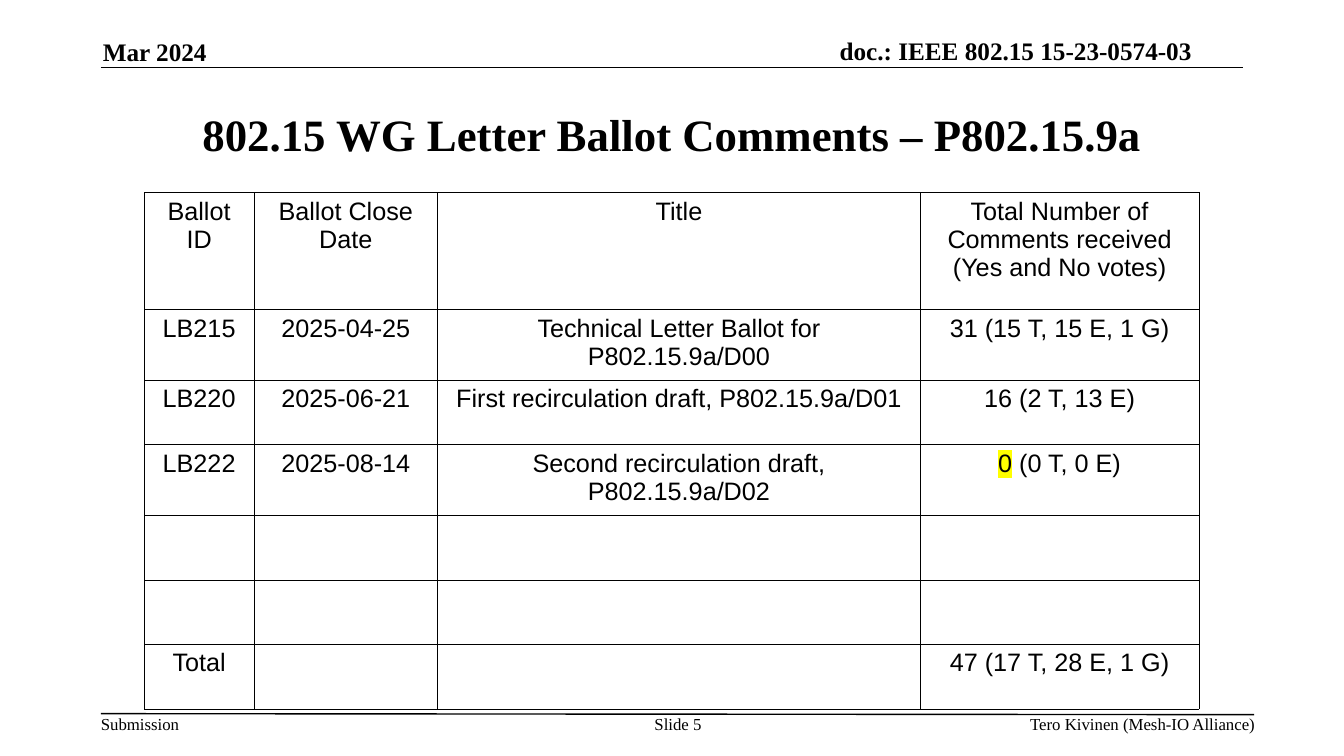
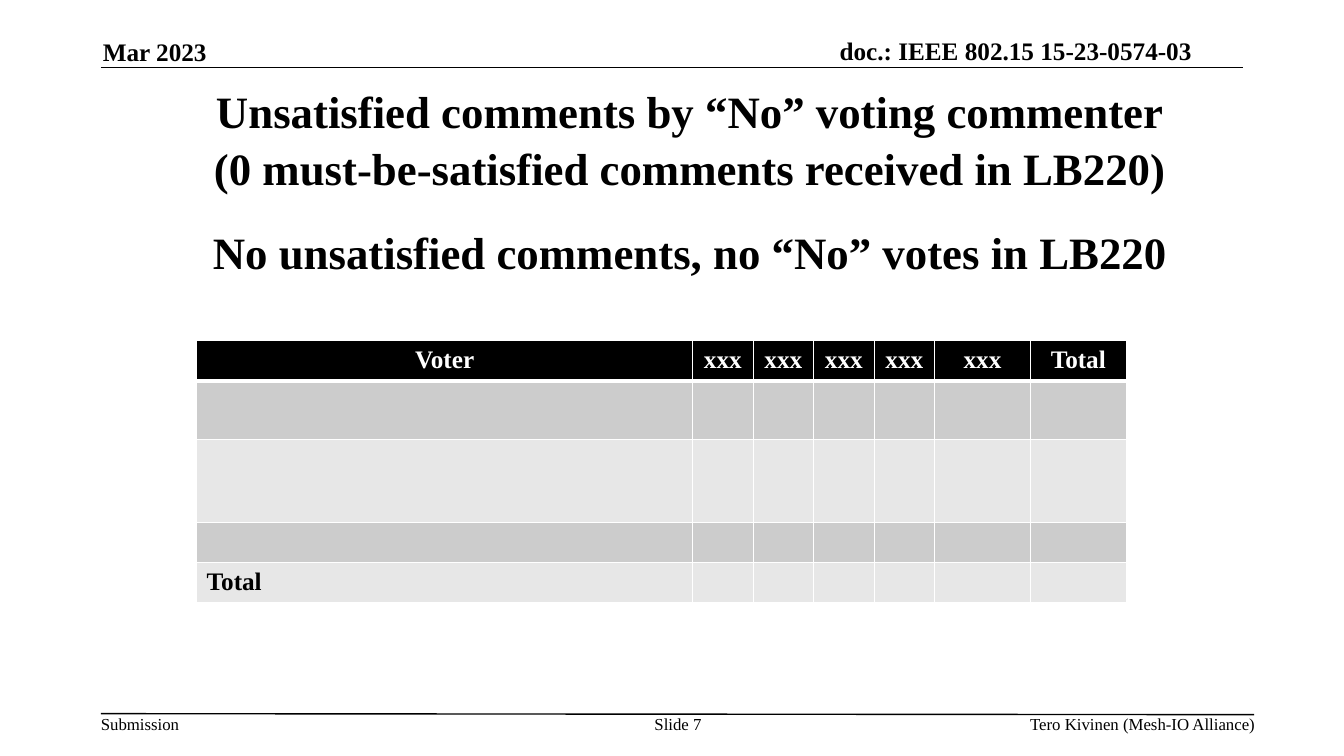
from dataclasses import dataclass
from typing import Optional

from lxml import etree
from pptx import Presentation
from pptx.dml.color import RGBColor
from pptx.enum.text import MSO_ANCHOR, MSO_AUTO_SIZE, PP_ALIGN
from pptx.enum.shapes import MSO_CONNECTOR
from pptx.oxml.ns import qn
from pptx.util import Inches, Pt

LEFT, CENTER, RIGHT = PP_ALIGN.LEFT, PP_ALIGN.CENTER, PP_ALIGN.RIGHT
TOP, MIDDLE, BOTTOM = MSO_ANCHOR.TOP, MSO_ANCHOR.MIDDLE, MSO_ANCHOR.BOTTOM
STRAIGHT = MSO_CONNECTOR.STRAIGHT
NO_FIT = MSO_AUTO_SIZE.NONE


@dataclass(frozen=True)
class Theme:
    """Colours, fonts and type sizes."""
    black: str = "000000"
    white: str = "FFFFFF"
    dark_band: str = "CCCCCC"
    light_band: str = "E7E7E7"
    mark: str = "FFFF00"
    serif: str = "Times New Roman"
    sans: str = "Arial"
    title: int = 32
    body: int = 18
    footer: int = 12


T = Theme()


@dataclass(frozen=True)
class TitleLine:
    """A line of the title and the points of space above it."""
    text: str
    before: int = 0


@dataclass(frozen=True)
class Box:
    """Place and size in inches."""
    x: float
    y: float
    w: float
    h: float


@dataclass(frozen=True)
class Label:
    """A running header or footer text."""
    text: str
    box: Box
    size: int = T.footer
    bold: bool = False
    align: PP_ALIGN = LEFT
    anchor: MSO_ANCHOR = TOP


@dataclass(frozen=True)
class Rule:
    """A horizontal line, from and to."""
    x1: float
    y1: float
    x2: float
    y2: float


RULES = (Rule(1, 0.67, 12.33, 0.67), Rule(1, 7.08, 12.44, 7.09))
LABELS = (
    Label("doc.: IEEE 802.15 15-23-0574-03", Box(6.72, 0.35, 5.1, 0.3),
          T.body, True, RIGHT, BOTTOM),
    Label("Submission", Box(1, 7.08, 0.78, 0.2)),
    Label("Tero Kivinen (Mesh-IO Alliance)", Box(7.81, 7.08, 4.64, 0.2), align=RIGHT),
)

BALLOT_COLS = (1.09, 1.82, 4.79, 2.76)
BALLOT_HEIGHTS = (1.16, 0.7, 0.64, 0.7, 0.64, 0.64, 0.64)
BALLOTS = (
    ("Ballot ID", "Ballot Close Date", "Title",
     "Total Number of Comments received (Yes and No votes)"),
    ("LB215", "2025-04-25", "Technical Letter Ballot for P802.15.9a/D00",
     "31 (15 T, 15 E, 1 G)"),
    ("LB220", "2025-06-21", "First recirculation draft, P802.15.9a/D01",
     "16 (2 T, 13 E)"),
    ("LB222", "2025-08-14", "Second recirculation draft, P802.15.9a/D02", ""),
    ("",) * 4,
    ("",) * 4,
    ("Total", "", "", "47 (17 T, 28 E, 1 G)"),
)
VOTER_COLS = (4.92,) + (0.6,) * 4 + (0.95,) * 2
VOTER_HEIGHTS = (0.38, 0.58, 0.82, 0.4, 0.4)
VOTER_HEADS = ("Voter",) + ("xxx",) * 5 + ("Total",)


def add_run(p, text: str, *, size: int = T.body, font: str = T.serif,
            color: str = T.black, bold: bool = False,
            highlight: Optional[str] = None) -> None:
    """Append a formatted run to a paragraph."""
    r = p.add_run()
    r.text = text
    r.font.size, r.font.name, r.font.bold = Pt(size), font, bold
    r.font.color.rgb = RGBColor.from_string(color)
    if highlight:
        mark = etree.Element(qn("a:highlight"))
        etree.SubElement(mark, qn("a:srgbClr"), val=highlight)
        r.font._element.find(qn("a:latin")).addprevious(mark)


def add_label(s, label: Label) -> None:
    """Draw a text box without margins."""
    b = label.box
    tf = s.shapes.add_textbox(Inches(b.x), Inches(b.y), Inches(b.w), Inches(b.h)).text_frame
    tf.word_wrap = True
    tf.vertical_anchor = label.anchor
    tf.margin_left = tf.margin_right = tf.margin_top = tf.margin_bottom = 0
    p = tf.paragraphs[0]
    p.alignment = label.align
    add_run(p, label.text, size=label.size, bold=label.bold)


def add_rule(s, rule: Rule) -> None:
    """Draw a thin line without a shadow."""
    ln = s.shapes.add_connector(STRAIGHT, Inches(rule.x1), Inches(rule.y1),
                                Inches(rule.x2), Inches(rule.y2))
    ln.line.color.rgb = RGBColor.from_string(T.black)
    ln.line.width = Pt(1)
    etree.SubElement(ln._element.spPr, qn("a:effectLst"))


def set_title(s, lines: tuple[TitleLine, ...], box: Box) -> None:
    """Place and fill the title placeholder."""
    sp = s.shapes.title
    sp.left, sp.top, sp.width, sp.height = map(Inches, (box.x, box.y, box.w, box.h))
    tf = sp.text_frame
    tf.auto_size, tf.word_wrap, tf.vertical_anchor = NO_FIT, True, MIDDLE
    for i, line in enumerate(lines):
        p = tf.add_paragraph() if i else tf.paragraphs[0]
        p.alignment = CENTER
        p.space_before = Pt(line.before)
        add_run(p, line.text, size=T.title, bold=True)


def add_slide(prs, date: str, number: int, lines: tuple[TitleLine, ...], title_box: Box):
    """Start a slide with its title, header and footer."""
    s = prs.slides.add_slide(prs.slide_layouts[5])
    set_title(s, lines, title_box)
    for rule in RULES:
        add_rule(s, rule)
    own = (
        Label(date, Box(1.02, 0.36, 2.73, 0.3), T.body, True, anchor=BOTTOM),
        Label(f"Slide {number}", Box(6.34, 7.08, 0.77, 0.39), align=CENTER),
    )
    for label in LABELS + own:
        add_label(s, label)
    return s


def add_grid(s, x: float, y: float, cols: tuple[float, ...], heights: tuple[float, ...]):
    """Add a plain table with the given column widths and row heights."""
    table = s.shapes.add_table(len(heights), len(cols), Inches(x), Inches(y),
                               Inches(sum(cols)), Inches(sum(heights))).table
    table.first_row = table.horz_banding = False
    for col, width in zip(table.columns, cols):
        col.width = Inches(width)
    for row, height in zip(table.rows, heights):
        row.height = Inches(height)
    return table


def style_cell(cell, *, border: str, width: float, fill: Optional[str] = None,
               top: Optional[float] = None, bottom: Optional[float] = None) -> None:
    """Set the fill and the four borders of a cell."""
    if fill:
        cell.fill.solid()
        cell.fill.fore_color.rgb = RGBColor.from_string(fill)
    else:
        cell.fill.background()
    widths = {"a:lnL": width, "a:lnR": width, "a:lnT": top or width, "a:lnB": bottom or width}
    tcPr = cell._tc.get_or_add_tcPr()
    for i, (tag, points) in enumerate(widths.items()):
        ln = etree.Element(qn(tag), w=str(int(Pt(points))))
        solid = etree.SubElement(ln, qn("a:solidFill"))
        etree.SubElement(solid, qn("a:srgbClr"), val=border)
        tcPr.insert(i, ln)


def ballot_slide(prs) -> None:
    """Build the slide of ballot comments."""
    s = add_slide(prs, "Mar 2024", 5,
                  (TitleLine("802.15 WG Letter Ballot Comments – P802.15.9a"),),
                  Box(1, 0.75, 11.33, 1.16))
    table = add_grid(s, 1.43, 1.91, BALLOT_COLS, BALLOT_HEIGHTS)
    for row, texts in zip(table.rows, BALLOTS):
        for cell, text in zip(row.cells, texts):
            style_cell(cell, border=T.black, width=0.06)
            p = cell.text_frame.paragraphs[0]
            p.alignment = CENTER
            if text:
                add_run(p, text, font=T.sans)
    p = table.cell(3, 3).text_frame.paragraphs[0]
    add_run(p, "0", font=T.sans, highlight=T.mark)
    add_run(p, " (0 T, 0 E)", font=T.sans)


def voter_slide(prs) -> None:
    """Build the slide of unsatisfied comments."""
    lines = (
        TitleLine("Unsatisfied comments by “No” voting commenter"),
        TitleLine("(0 must-be-satisfied comments received in LB220)", 2),
        TitleLine("No unsatisfied comments, no “No” votes in LB220", 22),
    )
    s = add_slide(prs, "Mar 2023", 7, lines, Box(1.02, 0.7, 11.65, 2.2))
    table = add_grid(s, 1.95, 3.38, VOTER_COLS, VOTER_HEIGHTS)
    for i, row in enumerate(table.rows):
        fill = (T.dark_band if i % 2 else T.light_band) if i else T.black
        for cell in row.cells:
            style_cell(cell, border=T.white, width=0.96, fill=fill,
                       top=3 if i == 1 else None, bottom=3 if i == 0 else None)
    for cell, text in zip(table.rows[0].cells, VOTER_HEADS):
        p = cell.text_frame.paragraphs[0]
        p.alignment = CENTER
        add_run(p, text, color=T.white, bold=True)
    add_run(table.cell(4, 0).text_frame.paragraphs[0], "Total", bold=True)


def main() -> None:
    """Build and save the presentation."""
    prs = Presentation()
    prs.slide_width, prs.slide_height = Inches(13.33), Inches(7.5)
    ballot_slide(prs)
    voter_slide(prs)
    prs.save("out.pptx")


if __name__ == "__main__":
    main()
